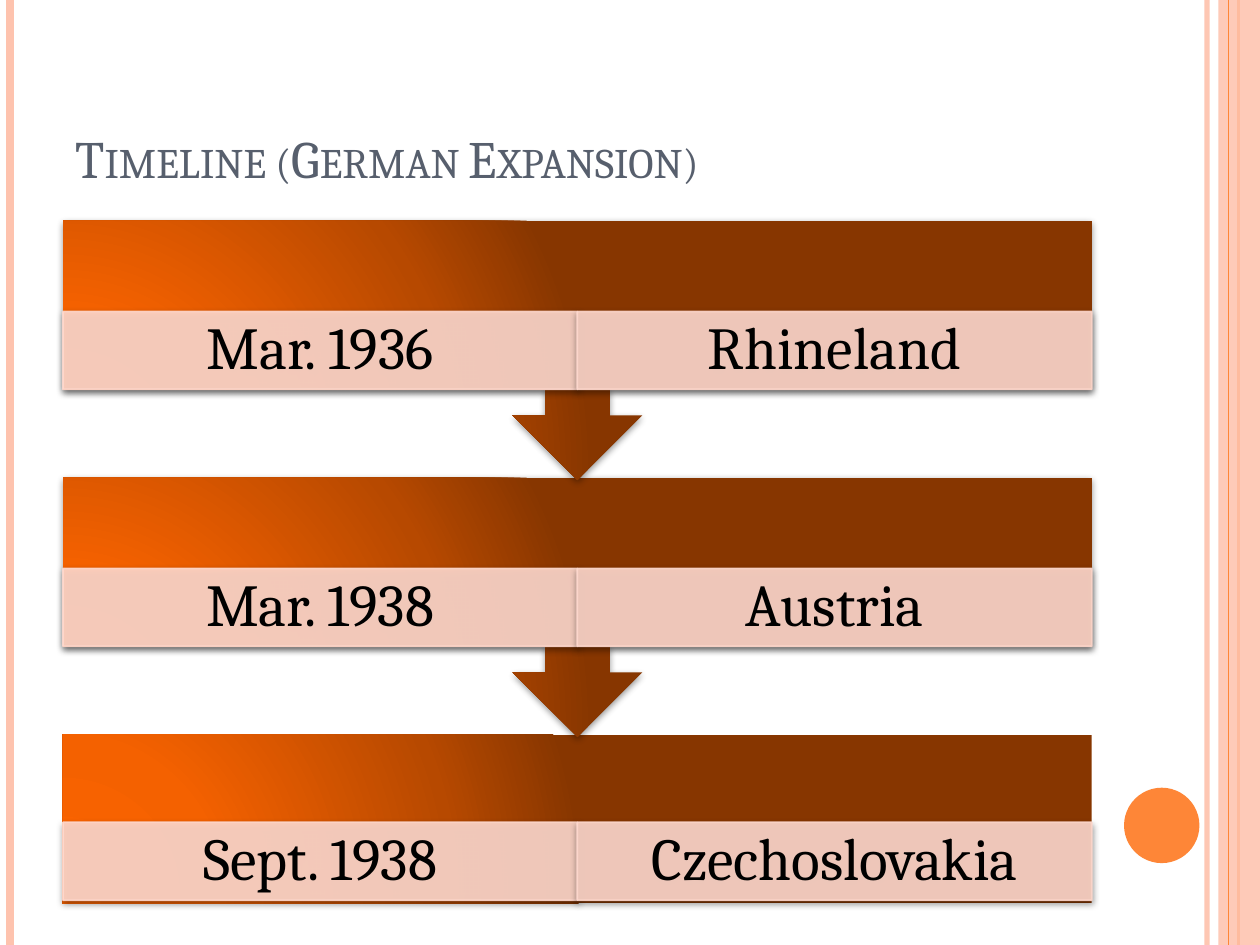
from dataclasses import dataclass
from typing import Optional

from lxml.etree import SubElement
from pptx import Presentation
from pptx.dml.color import RGBColor
from pptx.enum.shapes import MSO_CONNECTOR, MSO_SHAPE
from pptx.enum.text import MSO_ANCHOR, PP_ALIGN
from pptx.oxml import parse_xml
from pptx.oxml.ns import nsdecls, qn
from pptx.util import Cm, Pt


@dataclass(frozen=True)
class Theme:
    font: str = "Cambria"
    title_size: float = 30
    card_size: float = 34
    title: str = "575F6D"
    text: str = "000000"
    orange: str = "FE8637"
    stripe: str = "FEC3AE"
    card: str = "FFD9CE"
    gradient: tuple = ((0, "FD6400"), (30, "F46100"), (75, "B74900"), (100, "873600"))


@dataclass(frozen=True)
class Box:
    left: float
    top: float
    width: float
    height: float


@dataclass(frozen=True)
class Stripe:
    x: float
    width: float
    color: str
    opacity: int = 100


@dataclass(frozen=True)
class Event:
    date: str
    place: str


THEME = Theme()
SLIDE_WIDTH, SLIDE_HEIGHT = 25.4, 19.05
STRIPES_BELOW = (
    Stripe(24.33, 3, THEME.stripe, 93),
    Stripe(0.2, 4.5, THEME.stripe),
    Stripe(24.97, 1.5, THEME.orange),
)
STRIPE_ABOVE = Stripe(24.77, 0.75, THEME.orange)
EVENTS = (
    Event("Mar. 1936", "Rhineland"),
    Event("Mar. 1938", "Austria"),
    Event("Sept. 1938", "Czechoslovakia"),
)
TIMELINE_LEFT, TIMELINE_TOP, TIMELINE_WIDTH = 1.27, 4.45, 20.74
EVENT_PITCH, CALLOUT_HEIGHT, LAST_HEIGHT = 5.18, 5.23, 3.4
CARD_HEIGHT = 1.57


def set_opacity(shape, opacity: int) -> None:
    for color in shape._element.spPr.iter(qn("a:srgbClr")):
        SubElement(color, qn("a:alpha"), val=str(opacity * 1000))


def add_shadow(shape) -> None:
    effects = shape._element.spPr.find(qn("a:effectLst"))
    shadow = SubElement(effects, qn("a:outerShdw"), blurRad=str(Pt(4)), dist=str(Pt(1.6)),
                        dir="5400000", rotWithShape="0")
    color = SubElement(shadow, qn("a:srgbClr"), val="000000")
    SubElement(color, qn("a:alpha"), val="42000")


def set_gradient(shape) -> None:
    stops = "".join(
        f'<a:gs pos="{position * 1000}"><a:srgbClr val="{color}"/></a:gs>'
        for position, color in THEME.gradient
    )
    shape.fill.background()
    properties = shape._element.spPr
    properties.replace(properties.find(qn("a:noFill")), parse_xml(
        f'<a:gradFill {nsdecls("a")} rotWithShape="0"><a:gsLst>{stops}</a:gsLst>'
        '<a:path path="circle"><a:fillToRect l="5000" t="100000" r="120000" b="10000"/>'
        "</a:path></a:gradFill>"
    ))


def add_stripe(slide, stripe: Stripe) -> None:
    line = slide.shapes.add_connector(
        MSO_CONNECTOR.STRAIGHT, Cm(stripe.x), Cm(0), Cm(stripe.x), Cm(SLIDE_HEIGHT))
    line.line.color.rgb = RGBColor.from_string(stripe.color)
    line.line.width = Pt(stripe.width)
    if stripe.opacity < 100:
        set_opacity(line, stripe.opacity)
    SubElement(line._element.spPr, qn("a:effectLst"))


def add_shape(slide, kind: MSO_SHAPE, box: Box, color: Optional[str] = None):
    shape = slide.shapes.add_shape(
        kind, Cm(box.left), Cm(box.top), Cm(box.width), Cm(box.height))
    shape.shadow.inherit = False
    shape.line.fill.background()
    if color:
        shape.fill.solid()
        shape.fill.fore_color.rgb = RGBColor.from_string(color)
    return shape


def write_text(shape, text: str, *, size: float, color: str, anchor: MSO_ANCHOR,
               align: PP_ALIGN = PP_ALIGN.LEFT, side_inset: float = 0.25,
               line_spacing: float = 1.0, small_caps: bool = False) -> None:
    frame = shape.text_frame
    frame.word_wrap = True
    frame.vertical_anchor = anchor
    frame.margin_left = frame.margin_right = Cm(side_inset)
    frame.margin_top = frame.margin_bottom = Cm(0.13)
    paragraph = frame.paragraphs[0]
    paragraph.alignment = align
    paragraph.line_spacing = line_spacing
    run = paragraph.add_run()
    run.text = text
    run.font.name = THEME.font
    run.font.size = Pt(size)
    run.font.color.rgb = RGBColor.from_string(color)
    if small_caps:
        run.font._element.set("cap", "small")


def add_card(slide, text: str, box: Box) -> None:
    card = add_shape(slide, MSO_SHAPE.RECTANGLE, box, THEME.card)
    card.line.color.rgb = RGBColor.from_string(THEME.card)
    card.line.width = Pt(1)
    set_opacity(card, 90)
    add_shadow(card)
    write_text(card, text, size=THEME.card_size, color=THEME.text, anchor=MSO_ANCHOR.MIDDLE,
               align=PP_ALIGN.CENTER, side_inset=0.66, line_spacing=0.9)


def add_event(slide, index: int, event: Event) -> None:
    is_last = index == len(EVENTS) - 1
    top = TIMELINE_TOP + index * EVENT_PITCH
    height = LAST_HEIGHT if is_last else CALLOUT_HEIGHT
    kind = MSO_SHAPE.RECTANGLE if is_last else MSO_SHAPE.UP_ARROW_CALLOUT
    band = add_shape(slide, kind, Box(TIMELINE_LEFT, top, TIMELINE_WIDTH, height))
    band.rotation = 0 if is_last else 180
    set_gradient(band)
    add_shadow(band)
    card_top = top + height * (0.52 if is_last else 0.35)
    card_width = TIMELINE_WIDTH / 2
    for column, text in enumerate((event.date, event.place)):
        left = TIMELINE_LEFT + column * card_width
        add_card(slide, text, Box(left, card_top, card_width, CARD_HEIGHT))


def main() -> None:
    presentation = Presentation()
    presentation.slide_width = Cm(SLIDE_WIDTH)
    presentation.slide_height = Cm(SLIDE_HEIGHT)
    slide = presentation.slides.add_slide(presentation.slide_layouts[6])

    for stripe in STRIPES_BELOW:
        add_stripe(slide, stripe)
    side_band = add_shape(
        slide, MSO_SHAPE.RECTANGLE, Box(24.56, 0, 0.84, SLIDE_HEIGHT), THEME.stripe)
    set_opacity(side_band, 87)
    add_stripe(slide, STRIPE_ABOVE)
    add_shape(slide, MSO_SHAPE.OVAL, Box(22.66, 15.88, 1.52, 1.52), THEME.orange)

    title = slide.shapes.add_textbox(Cm(1.27), Cm(0.76), Cm(20.74), Cm(3.18))
    write_text(title, "Timeline (German Expansion)", size=THEME.title_size,
               color=THEME.title, anchor=MSO_ANCHOR.BOTTOM, small_caps=True)

    for index, event in reversed(tuple(enumerate(EVENTS))):
        add_event(slide, index, event)

    presentation.save("out.pptx")


if __name__ == "__main__":
    main()
